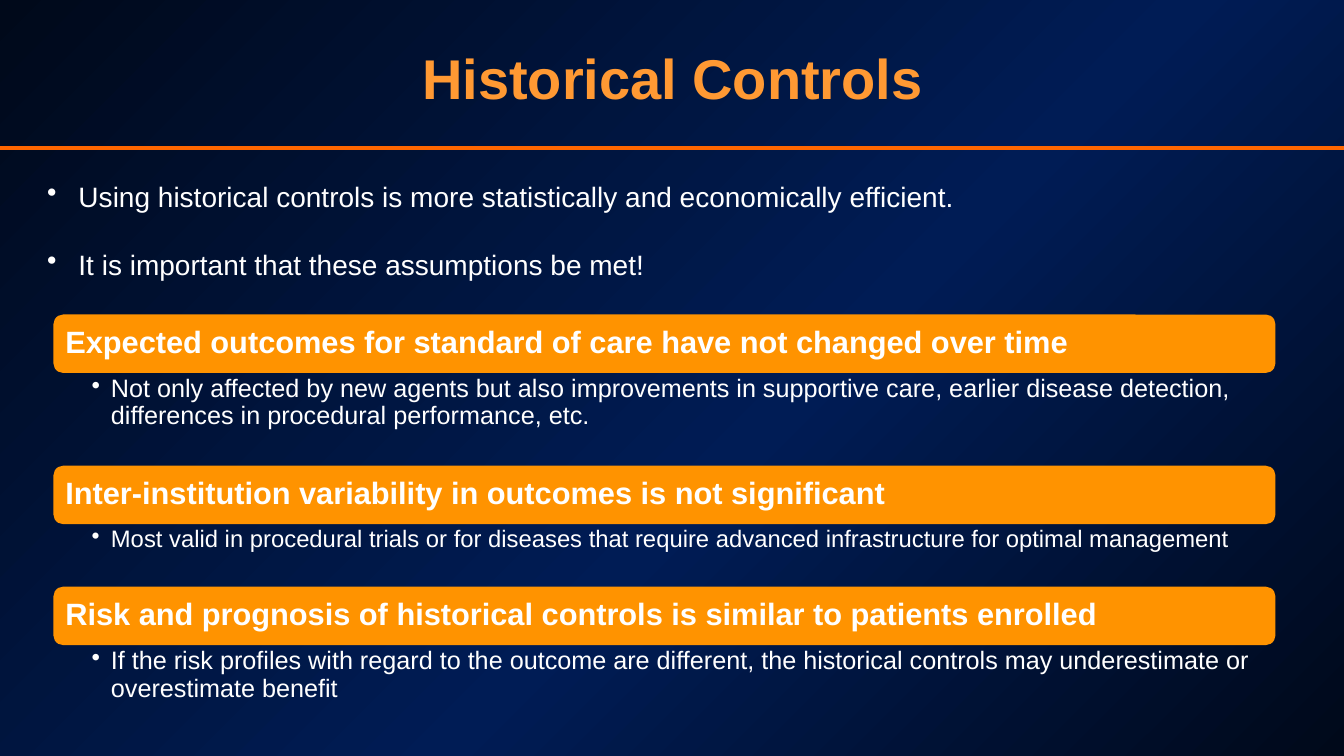
import copy
from dataclasses import dataclass

import pptx
import pptx.dml.color
import pptx.enum.shapes
import pptx.enum.text
import pptx.oxml.ns
import pptx.oxml.xmlchemy
import pptx.util

Inches, Pt = pptx.util.Inches, pptx.util.Pt
rgb = pptx.dml.color.RGBColor.from_string
qn = pptx.oxml.ns.qn
ALIGN = pptx.enum.text.PP_ALIGN
ANCHOR = pptx.enum.text.MSO_ANCHOR


@dataclass(frozen=True)
class Theme:
    font: str = "Arial"
    dark: str = "00091A"
    navy: str = "001C55"
    title: str = "FF9933"
    rule: str = "FF6600"
    bar: str = "FF9300"
    text: str = "FFFFFF"
    title_size: int = 40
    heading_size: int = 22
    point_size: int = 20


T = Theme()
POINTS = [
    "Using historical controls is more statistically and economically efficient.",
    "It is important that these assumptions be met!",
]
# heading, detail, detail type size, right inset, height of the detail box
ASSUMPTIONS = [
    ("Expected outcomes for standard of care have not changed over time",
     "Not only affected by new agents but also improvements in supportive care, "
     "earlier disease detection, differences in procedural performance, etc.",
     18, 0.14, 0.92),
    ("Inter-institution variability in outcomes is not significant",
     "Most valid in procedural trials or for diseases that require advanced "
     "infrastructure for optimal management",
     17, 0.17, 0.62),
    ("Risk and prognosis of historical controls is similar to patients enrolled",
     "If the risk profiles with regard to the outcome are different, the "
     "historical controls may underestimate or overestimate benefit",
     18, 0.14, 0.57),
]


def write(p, text, size, color=T.text, bold=False):
    p.text = text
    font = p.runs[0].font
    font.name, font.size, font.bold = T.font, Pt(size), bold
    font.color.rgb = rgb(color)


def add_bullet(p, indent):
    pPr = p._p.get_or_add_pPr()
    pPr.set("marL", str(Inches(indent)))
    pPr.set("indent", str(-Inches(indent)))
    bu = pPr.makeelement(qn("a:buChar"), {"char": "•"})
    pPr.append(bu)


def set_insets(tf, left, top, right, bottom):
    tf.margin_left, tf.margin_top = Inches(left), Inches(top)
    tf.margin_right, tf.margin_bottom = Inches(right), Inches(bottom)


def add_text_frame(s, x, y, w, h):
    tf = s.shapes.add_textbox(Inches(x), Inches(y), Inches(w), Inches(h)).text_frame
    tf.word_wrap = True
    return tf


def paint_background(s):
    fill = s.background.fill
    fill.gradient()
    fill.gradient_angle = 315
    gs_list = s._element.find(".//" + qn("a:gsLst"))
    gs_list.append(copy.deepcopy(gs_list[-1]))
    stops = [(0, T.dark), (0.57, T.navy), (1, T.dark)]
    for stop, (position, color) in zip(fill.gradient_stops, stops):
        stop.position = position
        stop.color.rgb = rgb(color)


def add_header(s, x, y, w, h):
    # Title
    tf = add_text_frame(s, x + 0.17, y + 0.38, w - 0.33, 0.77)
    write(tf.paragraphs[0], "Historical Controls", T.title_size, T.title, True)
    tf.paragraphs[0].alignment = ALIGN.CENTER
    # Rule across the slide
    rule = s.shapes.add_connector(
        pptx.enum.shapes.MSO_CONNECTOR.STRAIGHT,
        Inches(x), Inches(y + h), Inches(x + w), Inches(y + h))
    rule.line.color.rgb = rgb(T.rule)
    rule.line.width = Pt(3)
    spPr = rule._element.spPr
    spPr.append(spPr.makeelement(qn("a:effectLst"), {}))


def add_points(s, x, y, w, h):
    tf = add_text_frame(s, x, y, w, h)
    for i, text in enumerate(POINTS):
        p = tf.add_paragraph() if i else tf.paragraphs[0]
        write(p, text, T.point_size)
        p.space_after = Pt(24.5)
        add_bullet(p, 0.31)


def add_assumptions(s, x, y, w, bar_h):
    for heading, detail, size, right, detail_h in ASSUMPTIONS:
        # Heading bar
        sp = s.shapes.add_shape(
            pptx.enum.shapes.MSO_SHAPE.ROUNDED_RECTANGLE,
            Inches(x), Inches(y), Inches(w), Inches(bar_h))
        sp.shadow.inherit = False
        sp.fill.solid()
        sp.fill.fore_color.rgb = rgb(T.bar)
        sp.line.fill.background()
        tf = sp.text_frame
        tf.word_wrap = True
        tf.vertical_anchor = ANCHOR.MIDDLE
        # The rounded corner itself already insets the text by 0.03
        set_insets(tf, 0.09, 0.09, 0.09, 0.09)
        p = tf.paragraphs[0]
        write(p, heading, T.heading_size, bold=True)
        p.alignment = ALIGN.LEFT
        p.line_spacing = 0.9
        # Detail below the bar
        tf = add_text_frame(s, x, y + bar_h, w, detail_h)
        set_insets(tf, 0.38, 0.03, right, 0.03)
        p = tf.paragraphs[0]
        write(p, detail, size)
        p.level = 1
        p.line_spacing = 0.9
        add_bullet(p, 0.19)
        y += bar_h + detail_h


def main():
    prs = pptx.Presentation()
    prs.slide_width, prs.slide_height = Inches(13.33), Inches(7.5)
    s = prs.slides.add_slide(prs.slide_layouts[6])
    paint_background(s)
    add_header(s, 0, 0, 13.33, 1.47)
    add_points(s, 0.37, 1.73, 12.68, 1.3)
    add_assumptions(s, 0.53, 3.12, 12.12, 0.58)
    prs.save("out.pptx")


if __name__ == "__main__":
    main()
